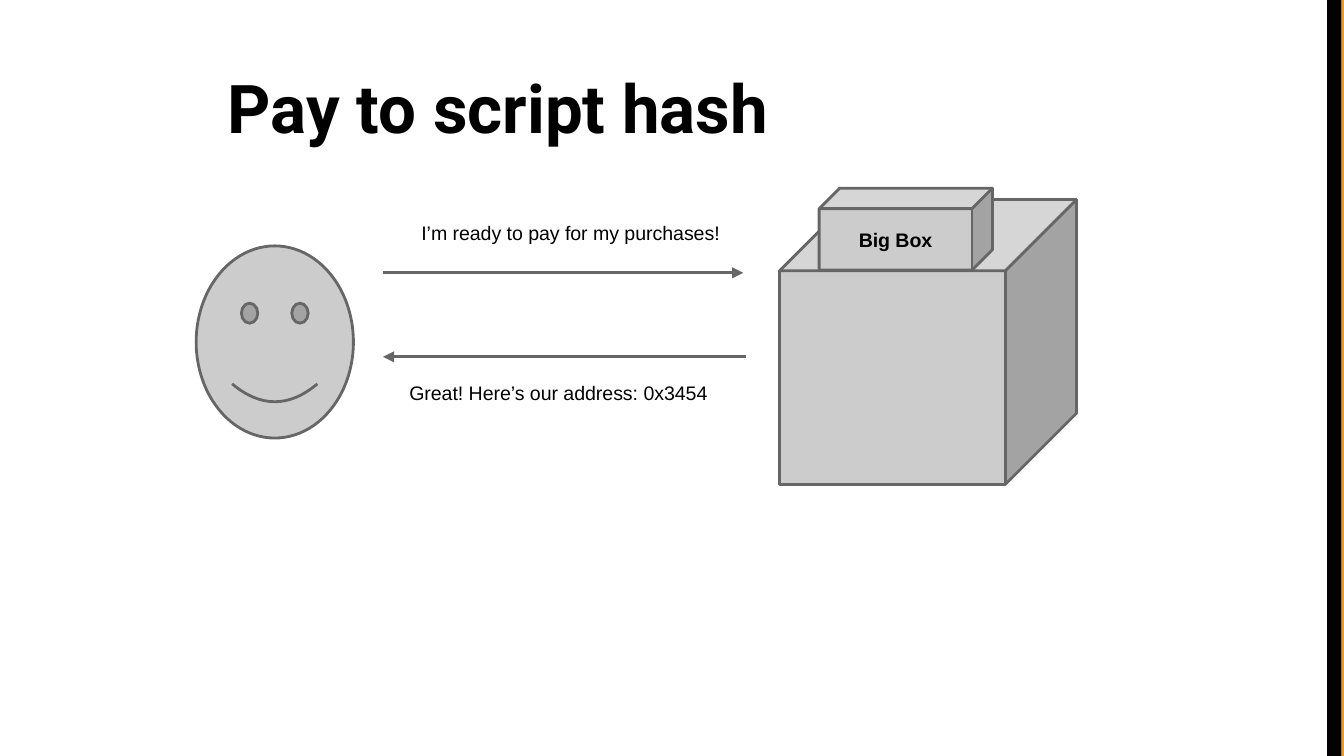
from lxml import etree
from pptx import Presentation
from pptx.dml.color import RGBColor
from pptx.enum.shapes import MSO_CONNECTOR, MSO_SHAPE
from pptx.enum.text import MSO_ANCHOR, MSO_AUTO_SIZE, PP_ALIGN
from pptx.oxml.ns import qn
from pptx.util import Pt

PX = 4572  # 200 px to the inch
PAGE_WIDTH, PAGE_HEIGHT = 2000, 1125
INSET = 15
LINE_WIDTH = 1.5
TEXT_SIZE = 10.5
TITLE_ONLY = 5

COLORS = {
    "text": "000000",
    "face": "CCCCCC",
    "outline": "666666",
    "stripe": "000000",
    "accent": "FF9900",
}
CUBE, SMILEY, RECTANGLE = MSO_SHAPE.CUBE, MSO_SHAPE.SMILEY_FACE, MSO_SHAPE.RECTANGLE
STRAIGHT = MSO_CONNECTOR.STRAIGHT
LEFT, CENTER = PP_ALIGN.LEFT, PP_ALIGN.CENTER
TOP, MIDDLE, BOTTOM = MSO_ANCHOR.TOP, MSO_ANCHOR.MIDDLE, MSO_ANCHOR.BOTTOM
NO_AUTOFIT = MSO_AUTO_SIZE.NONE


def color(name):
    return RGBColor.from_string(COLORS[name])


def emu(*lengths):
    return [length * PX for length in lengths]


def write(shape, text, size=TEXT_SIZE, font="Arial", bold=False, align=LEFT, anchor=TOP):
    frame = shape.text_frame
    frame.word_wrap = True
    frame.auto_size = NO_AUTOFIT
    frame.vertical_anchor = anchor
    frame.margin_left = frame.margin_right = INSET * PX
    frame.margin_top = frame.margin_bottom = INSET * PX
    para = frame.paragraphs[0]
    para.alignment = align
    span = para.add_run()
    span.text = text
    span.font.size = Pt(size)
    span.font.name = font
    span.font.bold = bold
    span.font.color.rgb = color("text")


def add_solid(page, kind, box, fill="face", outline="outline", adjust=None):
    shape = page.shapes.add_shape(kind, *emu(*box))
    shape.shadow.inherit = False
    shape.fill.solid()
    shape.fill.fore_color.rgb = color(fill)
    if outline:
        shape.line.color.rgb = color(outline)
        shape.line.width = Pt(LINE_WIDTH)
    else:
        shape.line.fill.background()
    if adjust is not None:
        shape.adjustments[0] = adjust
    return shape


def add_arrow(page, start, end):
    arrow = page.shapes.add_connector(STRAIGHT, *emu(*start, *end))
    arrow.line.color.rgb = color("outline")
    arrow.line.width = Pt(LINE_WIDTH)
    etree.SubElement(arrow.line._get_or_add_ln(), qn("a:tailEnd"), type="triangle")
    etree.SubElement(arrow._element.spPr, qn("a:effectLst"))


def add_label(page, text, box):
    write(page.shapes.add_textbox(*emu(*box)), text)


def add_stripes(page, box):
    left, top, width, height = box
    accent_width = 4
    black_width = width - accent_width
    add_solid(page, RECTANGLE, (left + black_width, top, accent_width, height), "accent", None)
    add_solid(page, RECTANGLE, (left, top, black_width, height), "stripe", None)


def add_title(page, box):
    title = page.shapes.title
    title.left, title.top, title.width, title.height = emu(*box)
    write(title, "Pay to script hash", 36, "Roboto", True, anchor=BOTTOM)


def add_store(page, box):
    left, top, width, height = box
    # Building, with the sign standing on its front edge
    add_solid(page, CUBE, (left, top + 17, width, height - 17), adjust=0.25)
    sign = add_solid(page, CUBE, (left + 59, top, 258, 122), adjust=0.25)
    write(sign, "Big Box", bold=True, align=CENTER, anchor=MIDDLE)


def add_dialogue(page, box):
    left, top, width, height = box
    right = left + width
    # Customer to store
    request_y = top + 92
    add_arrow(page, (left, request_y), (right - 4, request_y))
    add_label(page, "I’m ready to pay for my purchases!", (left + 42, top, 500, 70))
    # Store to customer
    reply_y = top + 217
    add_arrow(page, (right, reply_y), (left, reply_y))
    add_label(page, "Great! Here’s our address: 0x3454",
              (left + 24, top + height - 84, 536, 84))


def add_customer(page, box):
    add_solid(page, SMILEY, box, adjust=0.047)


def main():
    deck = Presentation()
    deck.slide_width, deck.slide_height = emu(PAGE_WIDTH, PAGE_HEIGHT)
    page = deck.slides.add_slide(deck.slide_layouts[TITLE_ONLY])
    add_stripes(page, (1975, 0, PAGE_WIDTH - 1975, PAGE_HEIGHT))
    add_title(page, (324, 46, 1350, 188))
    add_store(page, (1160, 280, 442, 441))
    add_dialogue(page, (570, 314, 540, 322))
    add_customer(page, (292, 366, 234, 286))
    deck.save("out.pptx")


if __name__ == "__main__":
    main()
